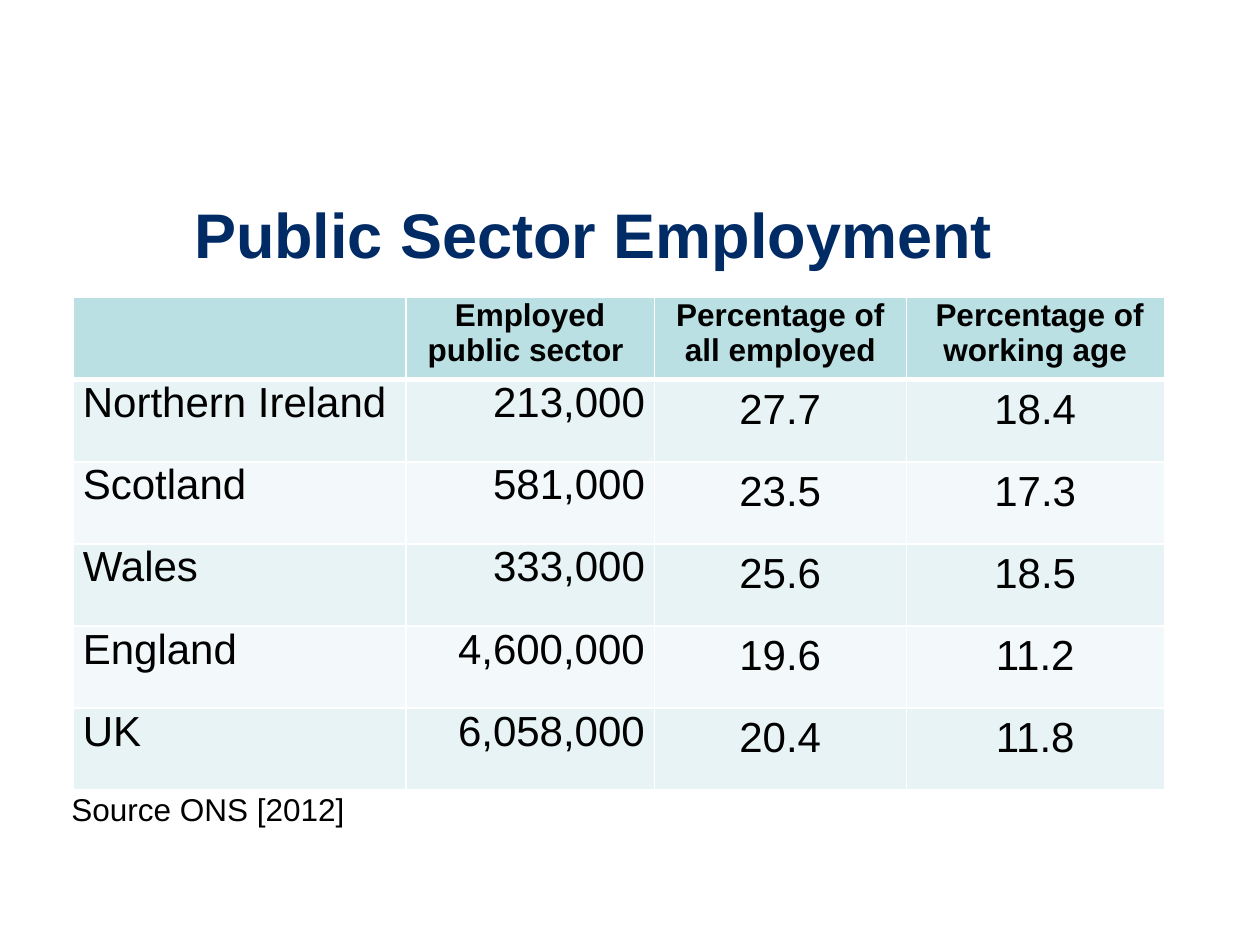
from lxml.etree import SubElement
from pptx import Presentation
from pptx.dml.color import RGBColor
from pptx.enum.text import MSO_ANCHOR, MSO_AUTO_SIZE, PP_ALIGN
from pptx.oxml.ns import qn
from pptx.util import Cm, Pt

# Content
TITLE = "Public Sector Employment"
HEADERS = ["", "Employed public sector ", "Percentage of all employed",
           " Percentage of working age"]
REGIONS = [
    ("Northern Ireland", "213,000", "27.7", "18.4"),
    ("Scotland", "581,000", "23.5", "17.3"),
    ("Wales", "333,000", "25.6", "18.5"),
    ("England", "4,600,000", "19.6", "11.2"),
    ("UK", "6,058,000", "20.4", "11.8"),
]
SOURCE = "Source ONS [2012]"

# Style
FONT = "Arial"
NAVY = RGBColor(0x00, 0x2B, 0x65)
BLACK = RGBColor(0x00, 0x00, 0x00)
WHITE = RGBColor(0xFF, 0xFF, 0xFF)
HEADER_FILL = RGBColor(0xBB, 0xE0, 0xE3)
BAND_FILLS = [RGBColor(0xE7, 0xF3, 0xF4), RGBColor(0xF3, 0xF9, 0xFA)]
COLUMN_WIDTHS = [Cm(6.7), Cm(5.01), Cm(5.08), Cm(5.2)]
COLUMN_ALIGNMENTS = [PP_ALIGN.LEFT, PP_ALIGN.RIGHT, PP_ALIGN.CENTER, PP_ALIGN.CENTER]
ROW_HEIGHT = Cm(1.655)


def add_text(paragraph, text, size, color=BLACK, bold=False):
    run = paragraph.add_run()
    run.text = text
    run.font.name = FONT
    run.font.size = Pt(size)
    run.font.bold = bold
    run.font.color.rgb = color


def set_borders(cell, top, bottom):
    properties = cell._tc.get_or_add_tcPr()
    for side, width in (("L", 1), ("R", 1), ("T", top), ("B", bottom)):
        line = SubElement(properties, qn(f"a:ln{side}"), w=str(Pt(width)))
        solid = SubElement(line, qn("a:solidFill"))
        SubElement(solid, qn("a:srgbClr"), val=str(WHITE))


presentation = Presentation()
presentation.slide_width = Cm(25.4)
presentation.slide_height = Cm(19.05)
slide = presentation.slides.add_slide(presentation.slide_layouts[5])

# Title
title = slide.shapes.title
title.left, title.top, title.width, title.height = Cm(3.66), Cm(3.86), Cm(19.84), Cm(1.88)
title.text_frame.auto_size = MSO_AUTO_SIZE.NONE
title.text_frame.vertical_anchor = MSO_ANCHOR.MIDDLE
heading = title.text_frame.paragraphs[0]
heading.alignment = PP_ALIGN.LEFT
heading.line_spacing = 0.9
add_text(heading, TITLE, 36, NAVY, bold=True)

# Employment table
rows = [HEADERS, *REGIONS]
employment = slide.shapes.add_table(
    len(rows), len(HEADERS), Cm(1.48), Cm(6), sum(COLUMN_WIDTHS), ROW_HEIGHT * len(rows)
).table
for column, width in zip(employment.columns, COLUMN_WIDTHS):
    column.width = width

for r, values in enumerate(rows):
    employment.rows[r].height = ROW_HEIGHT
    is_header = r == 0
    for c, value in enumerate(values):
        cell = employment.cell(r, c)
        set_borders(cell, top=3 if r == 1 else 1, bottom=3 if is_header else 1)
        cell.fill.solid()
        cell.fill.fore_color.rgb = HEADER_FILL if is_header else BAND_FILLS[(r - 1) % 2]
        if is_header or c < 2:
            cell.margin_left = cell.margin_right = Cm(0.19)
            cell.margin_top = cell.margin_bottom = 0
        paragraph = cell.text_frame.paragraphs[0]
        paragraph.alignment = PP_ALIGN.CENTER if is_header else COLUMN_ALIGNMENTS[c]
        if value:
            add_text(paragraph, value, 18 if is_header else 24, bold=is_header)

# Source line
source = slide.shapes.add_textbox(Cm(1.19), Cm(15.8), Cm(10.8), Cm(2.06))
source.text_frame.word_wrap = True
add_text(source.text_frame.paragraphs[0], SOURCE, 18)

presentation.save("out.pptx")
